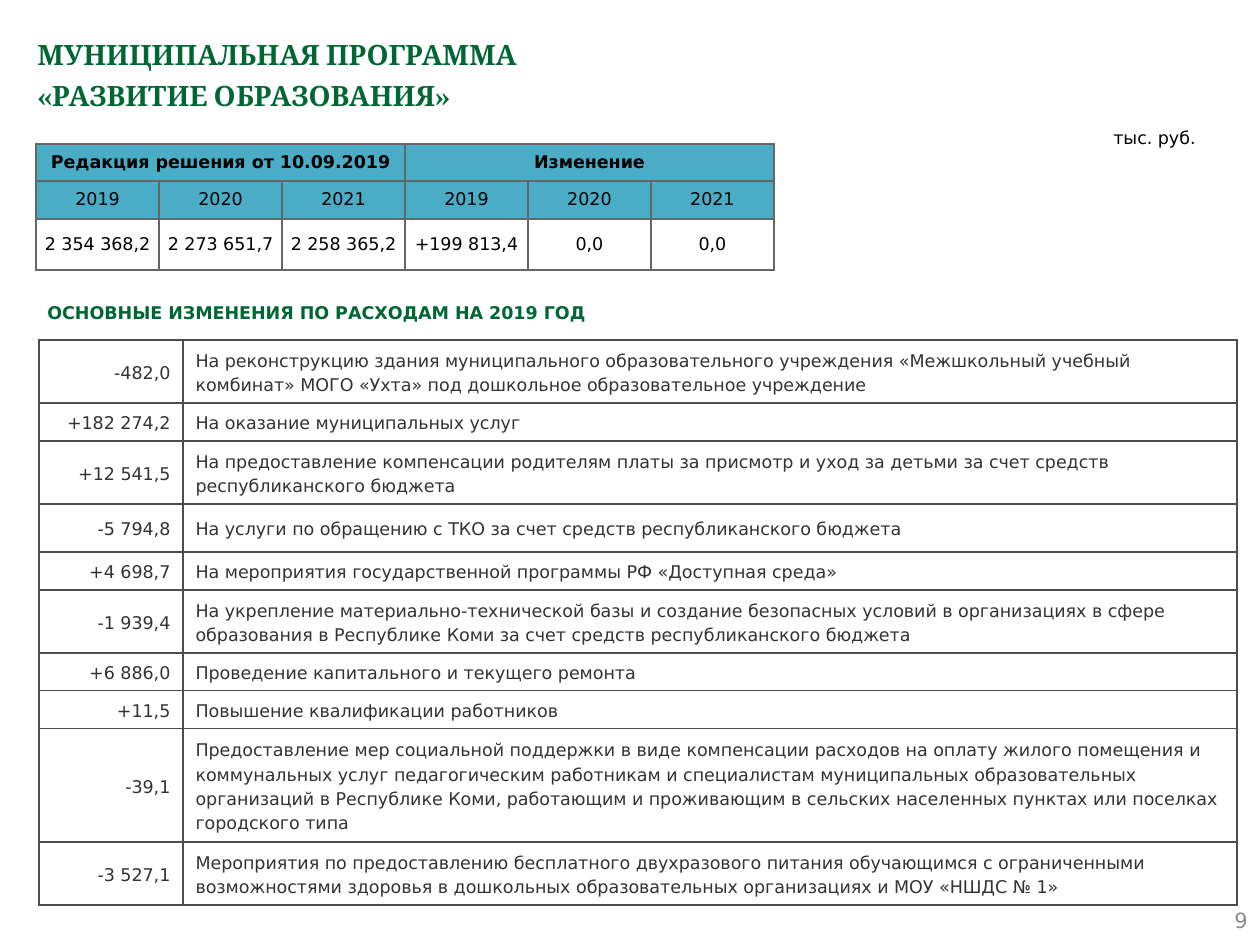
from dataclasses import dataclass

import lxml.etree
import pptx
import pptx.dml.color
import pptx.enum.shapes
import pptx.enum.text
import pptx.oxml.ns
import pptx.util

PX = 914400 / 126
ALIGN = pptx.enum.text.PP_ALIGN
ANCHOR = pptx.enum.text.MSO_ANCHOR
GREEN, BLACK, GREY, DARK = "006633", "000000", "8C8C8C", "333333"
HEADER_BLUE = "4BACC6"


def px(length: int) -> int:
    return round(length * PX)


def colour(value: str) -> pptx.dml.color.RGBColor:
    return pptx.dml.color.RGBColor.from_string(value)


@dataclass
class Style:
    colour: str
    size: int = 10
    font: str = "DejaVu Sans"
    bold: bool = False
    align: ALIGN = ALIGN.LEFT
    spacing: float = 1.0


@dataclass
class Label:
    text: str
    box: tuple[int, int, int, int]
    style: Style
    anchor: ANCHOR = ANCHOR.TOP


@dataclass
class Change:
    amount: str
    purpose: str
    height: int


TITLE = Label("МУНИЦИПАЛЬНАЯ ПРОГРАММА \v«РАЗВИТИЕ ОБРАЗОВАНИЯ»", (25, 25, 1211, 100),
              Style(GREEN, 16, "Cambria", True, spacing=1.2))
PAGE_NUMBER = Label("9", (966, 895, 294, 50), Style(GREY, 12, align=ALIGN.RIGHT), ANCHOR.MIDDLE)
UNITS = Label("тыс. руб.", (1101, 117, 127, 38), Style(BLACK, spacing=1.2))
SECTION = Label("ОСНОВНЫЕ ИЗМЕНЕНИЯ ПО РАСХОДАМ НА 2019 ГОД", (35, 285, 670, 54),
                Style(GREEN, bold=True), ANCHOR.MIDDLE)

CHANGES = [
    Change("-482,0", "На реконструкцию здания муниципального образовательного учреждения "
           "«Межшкольный учебный комбинат» МОГО «Ухта» под дошкольное образовательное учреждение", 62),
    Change("+182 274,2", "На оказание муниципальных услуг", 37),
    Change("+12 541,5", "На предоставление компенсации родителям платы за присмотр и уход "
           "за детьми за счет средств республиканского бюджета", 61),
    Change("-5 794,8", "На услуги по обращению с ТКО за счет средств республиканского бюджета", 48),
    Change("+4 698,7", "На мероприятия государственной программы РФ «Доступная среда»", 37),
    Change("-1 939,4", "На укрепление материально-технической базы и создание безопасных условий "
           "в организациях в сфере образования в Республике Коми за счет средств "
           "республиканского бюджета", 62),
    Change("+6 886,0", "Проведение капитального и текущего ремонта", 37),
    Change("+11,5", "Повышение квалификации работников", 37),
    Change("-39,1", "Предоставление мер социальной поддержки в виде компенсации расходов на оплату "
           "жилого помещения и коммунальных услуг педагогическим работникам и специалистам "
           "муниципальных образовательных организаций в Республике Коми, работающим и проживающим "
           "в сельских населенных пунктах или поселках городского типа", 110),
    Change("-3 527,1", "Мероприятия по предоставлению бесплатного двухразового питания обучающимся "
           "с ограниченными возможностями здоровья в дошкольных образовательных организациях "
           "и МОУ «НШДС № 1»", 62),
]

YEARS = ["2019", "2020", "2021"]
SUMMARY = [
    ["Редакция решения от 10.09.2019", "", "", "Изменение", "", ""],
    YEARS * 2,
    ["2 354 368,2", "2 273 651,7", "2 258 365,2", "+199 813,4", "0,0", "0,0"],
]


def write(frame, text: str, style: Style) -> None:
    frame.text = text
    for paragraph in frame.paragraphs:
        paragraph.alignment = style.align
        paragraph.line_spacing = style.spacing
        for run in paragraph.runs:
            formats = {"name": style.font, "size": pptx.util.Pt(style.size), "bold": style.bold}
            for attribute, value in formats.items():
                setattr(run.font, attribute, value)
            run.font.color.rgb = colour(style.colour)


def fill_frame(frame, label: Label) -> None:
    frame.word_wrap = True
    frame.vertical_anchor = label.anchor
    write(frame, label.text, label.style)


def add_label(slide, label: Label) -> None:
    fill_frame(slide.shapes.add_textbox(*map(px, label.box)).text_frame, label)


def add_section(slide, label: Label) -> None:
    plate = slide.shapes.add_shape(pptx.enum.shapes.MSO_SHAPE.PENTAGON, *map(px, label.box))
    plate.adjustments[0] = 0
    plate.shadow.inherit = False
    plate.fill.background()
    plate.line.fill.background()
    fill_frame(plate.text_frame, label)


def add_grid(slide, left: int, top: int, widths: list[int], heights: list[int]):
    table = slide.shapes.add_table(len(heights), len(widths), px(left), px(top),
                                   px(sum(widths)), px(sum(heights))).table
    table.first_row = table.horz_banding = False
    for column, width in zip(table.columns, widths):
        column.width = px(width)
    for row, height in zip(table.rows, heights):
        row.height = px(height)
    return table


def set_cell(cell, text: str, style: Style, border: str, fill: str = "", inset: int = 0) -> None:
    qn = pptx.oxml.ns.qn
    properties = cell._tc.get_or_add_tcPr()
    for side in ("a:lnL", "a:lnR", "a:lnT", "a:lnB"):
        line = lxml.etree.SubElement(properties, qn(side), w=str(pptx.util.Pt(1)))
        solid = lxml.etree.SubElement(line, qn("a:solidFill"))
        lxml.etree.SubElement(solid, qn("a:srgbClr"), val=border)
    if fill:
        cell.fill.solid()
        cell.fill.fore_color.rgb = colour(fill)
    else:
        cell.fill.background()
    if inset:
        for side in ("left", "right", "top", "bottom"):
            setattr(cell, f"margin_{side}", px(inset))
    cell.vertical_anchor = ANCHOR.MIDDLE
    write(cell.text_frame, text, style)


def add_changes(slide) -> None:
    table = add_grid(slide, 39, 340, [144, 1054], [change.height for change in CHANGES])
    for row, change in enumerate(CHANGES):
        for column, (text, align) in enumerate([(change.amount, ALIGN.RIGHT),
                                                (change.purpose, ALIGN.LEFT)]):
            set_cell(table.cell(row, column), text, Style(DARK, align=align, spacing=1.2), "4D4D4D")


def add_summary(slide) -> None:
    table = add_grid(slide, 36, 144, [123] * 6, [37, 38, 51])
    for row, texts in enumerate(SUMMARY):
        for column, text in enumerate(texts):
            set_cell(table.cell(row, column), text, Style(BLACK, bold=row == 0, align=ALIGN.CENTER),
                     "666666", HEADER_BLUE if row < 2 else "", 6)
    for first in (0, 3):
        table.cell(0, first).merge(table.cell(0, first + 2))


def main() -> None:
    deck = pptx.Presentation()
    deck.slide_width, deck.slide_height = px(1260), px(945)
    slide = deck.slides.add_slide(deck.slide_layouts[6])
    add_label(slide, TITLE)
    add_label(slide, PAGE_NUMBER)
    add_section(slide, SECTION)
    add_changes(slide)
    add_label(slide, UNITS)
    add_summary(slide)
    deck.save("out.pptx")


if __name__ == "__main__":
    main()
